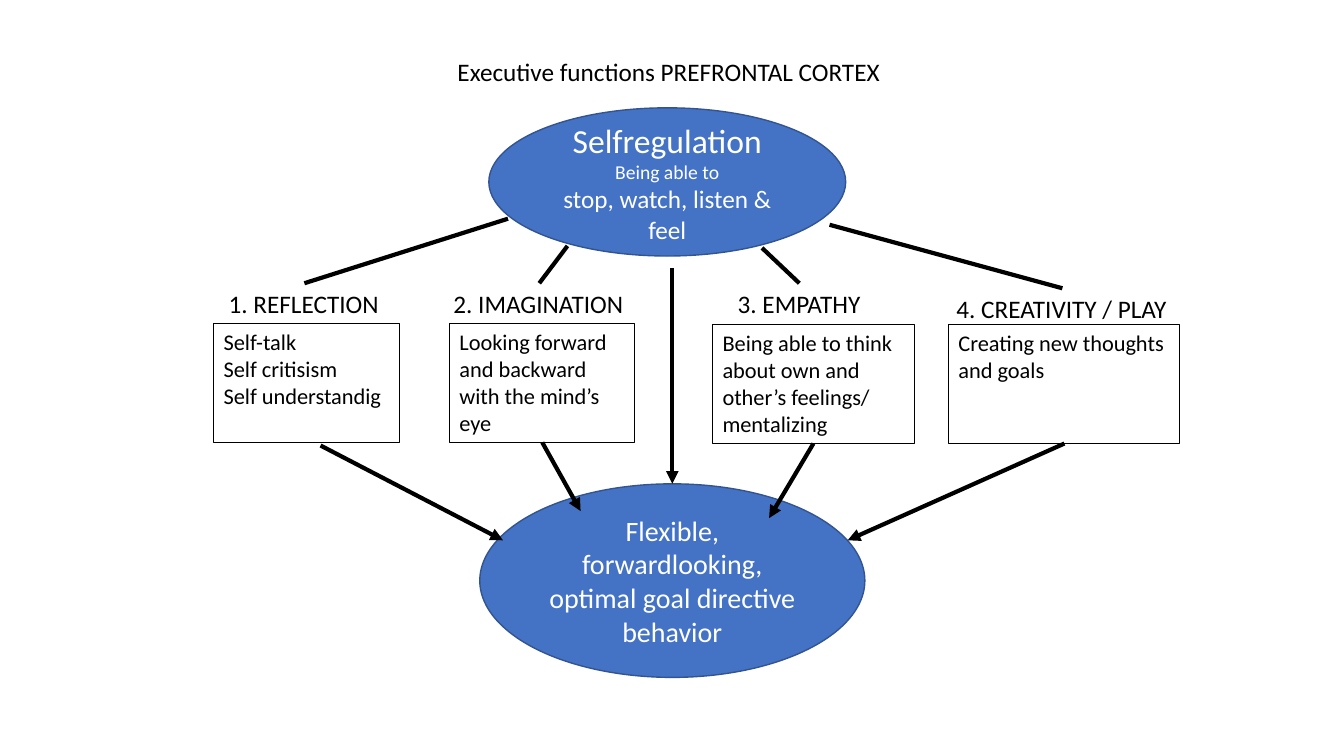
from lxml import etree
from pptx import Presentation
from pptx.dml.color import RGBColor
from pptx.enum.shapes import MSO_CONNECTOR, MSO_SHAPE
from pptx.enum.text import MSO_ANCHOR, MSO_AUTO_SIZE, PP_ALIGN
from pptx.oxml.ns import qn
from pptx.util import Inches, Pt

COLUMNS, ROWS = 40, 22.5
CELL = Inches(1) / 3


def grid(*cells):
    return [round(cell * CELL) for cell in cells]


def color(hex_code):
    return RGBColor.from_string(hex_code)


def write(frame, *lines, sizes=(18,), ink="000000", align=PP_ALIGN.LEFT,
          anchor=MSO_ANCHOR.TOP, wrap=True):
    """Write one paragraph per line; the last size serves all further lines."""
    frame.word_wrap = wrap
    frame.vertical_anchor = anchor
    for index, line in enumerate(lines):
        paragraph = frame.paragraphs[0] if index == 0 else frame.add_paragraph()
        paragraph.alignment = align
        run = paragraph.add_run()
        run.text = line
        run.font.name = "Calibri"
        run.font.size = Pt(sizes[min(index, len(sizes) - 1)])
        run.font.color.rgb = color(ink)


class Diagram:
    """Draws on one slide; every length is in grid cells."""
    ink, oval_fill, oval_edge = "000000", "4472C4", "325491"

    def __init__(self, slide):
        self.shapes = slide.shapes

    def label(self, text, left, top, width):
        frame = self.shapes.add_textbox(*grid(left, top, width, 1.2)).text_frame
        write(frame, text, ink=self.ink, wrap=False)
        frame.auto_size = MSO_AUTO_SIZE.SHAPE_TO_FIT_TEXT

    def outline(self, kind, area, edge, weight):
        shape = self.shapes.add_shape(kind, *grid(*area))
        shape.shadow.inherit = False
        shape.line.color.rgb = color(edge)
        shape.line.width = Pt(weight)
        return shape

    def box(self, lines, *area):
        shape = self.outline(MSO_SHAPE.RECTANGLE, area, self.ink, 0.75)
        shape.fill.background()
        write(shape.text_frame, *lines, sizes=(16,), ink=self.ink)

    def oval(self, lines, sizes, *area):
        shape = self.outline(MSO_SHAPE.OVAL, area, self.oval_edge, 1)
        shape.fill.solid()
        shape.fill.fore_color.rgb = color(self.oval_fill)
        write(shape.text_frame, *lines, sizes=sizes, ink="FFFFFF",
              align=PP_ALIGN.CENTER, anchor=MSO_ANCHOR.MIDDLE)

    def line(self, start, end, arrow=False):
        link = self.shapes.add_connector(MSO_CONNECTOR.STRAIGHT, *grid(*start, *end))
        link.line.color.rgb = color(self.ink)
        link.line.width = Pt(3)
        if arrow:
            etree.SubElement(link.line._get_or_add_ln(), qn("a:tailEnd"), type="triangle")
        etree.SubElement(link._element.spPr, qn("a:effectLst"))


# heading, (left, top, width), box lines, (left, top, width),
# line from the upper oval, arrow to the lower oval
BRANCHES = [
    ("1. REFLECTION", (6.51, 8.43, 5.1),
     ["Self-talk", "Self critisism", "Self understandig"], (6.36, 9.63, 5.52),
     [(15.12, 6.51), (9.06, 8.43)], [(9.54, 13.26), (14.97, 16.08)]),
    ("2. IMAGINATION", (13.2, 8.43, 5.7),
     ["Looking forward and backward with the mind’s eye"], (13.38, 9.63, 5.52),
     [(16.89, 7.32), (16.05, 8.43)], [(16.14, 13.17), (17.28, 15.21)]),
    ("3. EMPATHY", (21.66, 8.43, 4.29),
     ["Being able to think about own and other’s feelings/ mentalizing"], (21.21, 9.66, 6),
     [(22.68, 7.38), (23.79, 8.43)], [(24.21, 13.2), (22.89, 15.42)]),
    ("4. CREATIVITY / PLAY", (28.17, 8.58, 6.93),
     ["Creating new thoughts and goals"], (28.23, 9.66, 6.87),
     [(24.69, 6.69), (31.62, 8.58)], [(31.68, 13.2), (25.23, 16.08)]),
]
BOX_HEIGHT = 3.54


def main():
    deck = Presentation()
    deck.slide_width, deck.slide_height = grid(COLUMNS, ROWS)
    diagram = Diagram(deck.slides.add_slide(deck.slide_layouts[6]))

    diagram.label("Executive functions PREFRONTAL CORTEX", 13.32, 1.53, 13.35)
    diagram.oval(["Flexible, forwardlooking, optimal goal directive behavior"], (20,),
                 14.28, 14.4, 11.46, 5.76)
    diagram.oval(["Selfregulation", "Being able to", "stop, watch, listen & feel"],
                 (24, 14, 18), 14.55, 3.21, 10.62, 4.41)
    diagram.line((20.01, 7.98), (20.01, 14.4), arrow=True)
    for heading, heading_place, details, box_place, source, result in BRANCHES:
        diagram.label(heading, *heading_place)
        diagram.box(details, *box_place, BOX_HEIGHT)
        diagram.line(*source)
        diagram.line(*result, arrow=True)

    deck.save("out.pptx")


if __name__ == "__main__":
    main()
